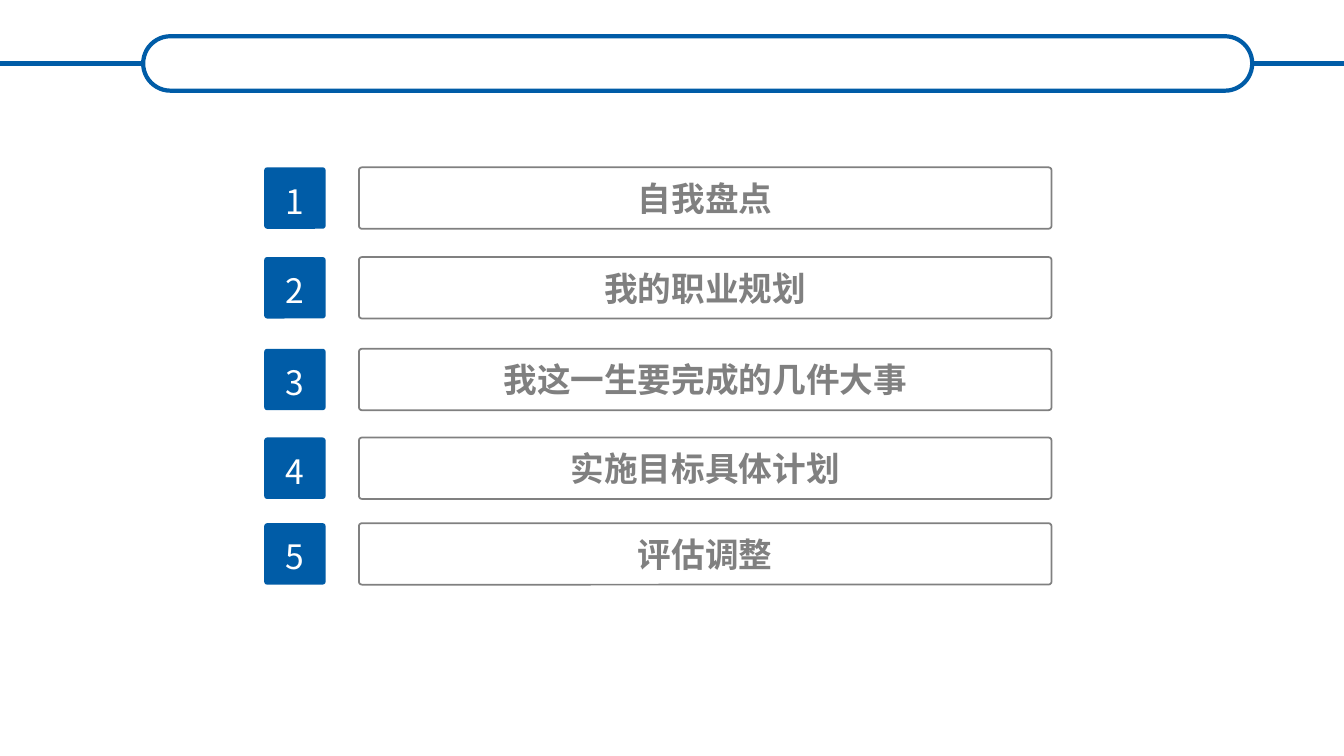
"""Build an agenda slide with five numbered sections under a header pill."""
from lxml.etree import SubElement
from pptx import Presentation
from pptx.dml.color import RGBColor
from pptx.enum.shapes import MSO_CONNECTOR as CONN, MSO_SHAPE as SHAPE
from pptx.enum.text import MSO_ANCHOR as ANCHOR, PP_ALIGN as ALIGN
from pptx.oxml.ns import qn
from pptx.util import Inches, Pt

SECTIONS = [
    (1.66, "自我盘点"),
    (2.55, "我的职业规划"),
    (3.46, "我这一生要完成的几件大事"),
    (4.34, "实施目标具体计划"),
    (5.19, "评估调整"),
]
COLORS = {"blue": "005CA7", "gray": "808080", "white": "FFFFFF"}
FONT = "Noto Sans CJK SC"
WIDTH, HEIGHT = 13.33, 7.5
ROW_H = 0.61
NUMBER_X, BAR_X, BAR_W = 2.62, 3.56, 6.87
PILL = (1.42, 0.36, 11, 0.54)


def color(name):
    return RGBColor.from_string(COLORS[name])


def add_box(slide, box, rounding, fill=None, line=None, weight=1.25):
    s = slide.shapes.add_shape(SHAPE.ROUNDED_RECTANGLE, *map(Inches, box))
    s.adjustments[0] = rounding
    s.shadow.inherit = False
    if fill:
        s.fill.solid()
        s.fill.fore_color.rgb = color(fill)
    else:
        s.fill.background()
    if line:
        s.line.color.rgb = color(line)
        s.line.width = Pt(weight)
    else:
        s.line.fill.background()
    return s


def add_label(s, text, ink, bold=False, top=0.05):
    tf = s.text_frame
    tf.word_wrap = True
    tf.vertical_anchor = ANCHOR.MIDDLE
    tf.margin_top, tf.margin_bottom = Inches(top), Inches(0.05)
    p = tf.paragraphs[0]
    p.text = text
    p.alignment = ALIGN.CENTER
    p.font.size = Pt(24)
    p.font.bold = bold
    p.font.color.rgb = color(ink)
    p.font.name = FONT
    SubElement(p._p.pPr.find(qn("a:defRPr")), qn("a:ea"), typeface=FONT)


def add_header(slide):
    pill = add_box(slide, PILL, 0.5, line="blue", weight=3)
    x, y, w, h = PILL
    middle = Inches(y + h / 2)
    for side, start, edge in ((1, x, 0), (3, x + w, WIDTH)):
        line = slide.shapes.add_connector(
            CONN.STRAIGHT, Inches(start), middle, Inches(edge), middle)
        line.begin_connect(pill, side)
        line.line.color.rgb = color("blue")
        line.line.width = Pt(3)
        SubElement(line._element.spPr, qn("a:effectLst"))


def main():
    prs = Presentation()
    prs.slide_width, prs.slide_height = Inches(WIDTH), Inches(HEIGHT)
    slide = prs.slides.add_slide(prs.slide_layouts[6])
    for number, (top, title) in enumerate(SECTIONS, 1):
        square = add_box(slide, (NUMBER_X, top, ROW_H, ROW_H), 0.05, "blue")
        add_label(square, str(number), "white", top=0.1)
        bar = add_box(slide, (BAR_X, top, BAR_W, ROW_H), 0.05, "white", "gray")
        add_label(bar, title, "gray", bold=True)
    add_header(slide)
    prs.save("out.pptx")


if __name__ == "__main__":
    main()
